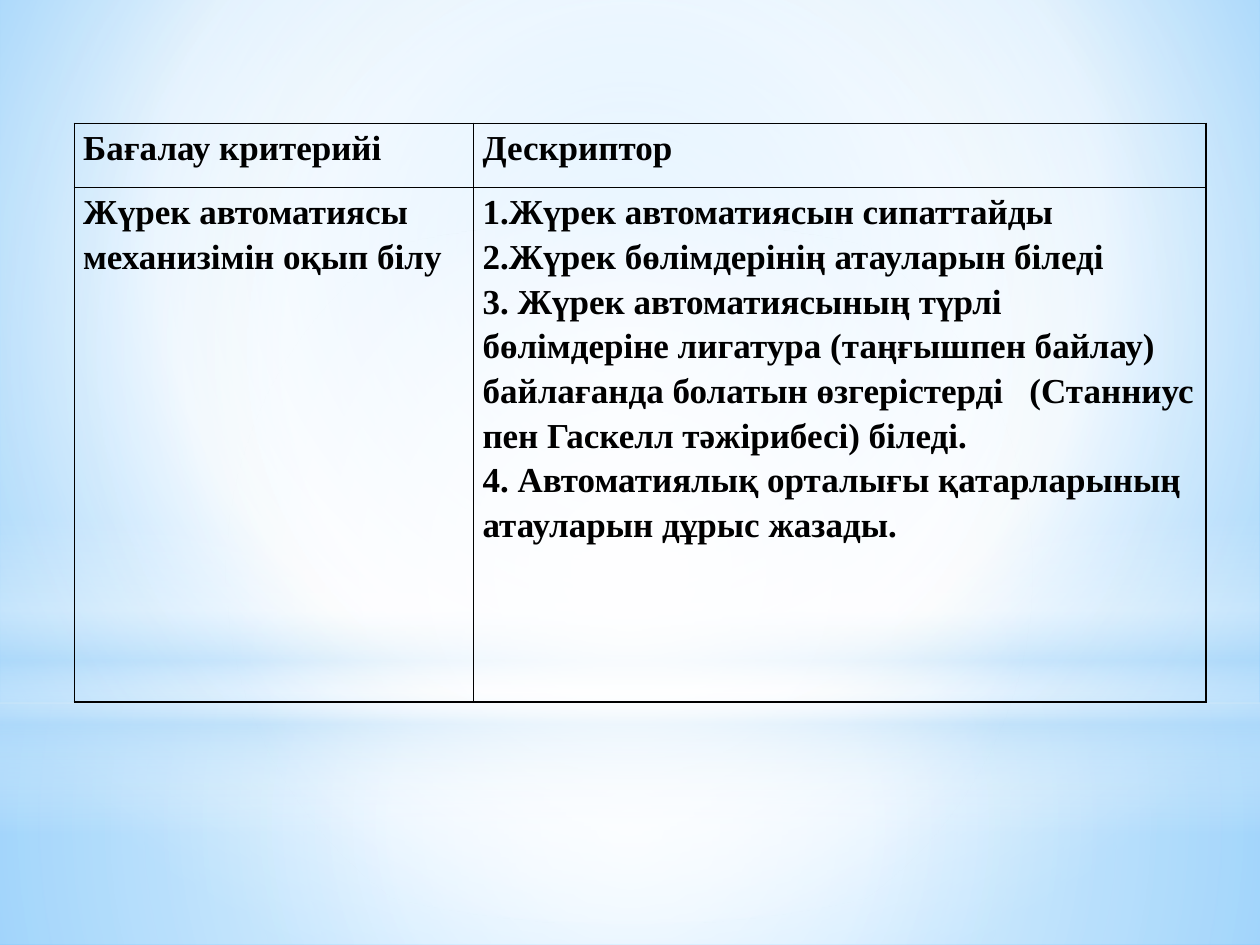
from lxml import etree
from pptx import Presentation
from pptx.dml.color import RGBColor
from pptx.enum import shapes
from pptx.oxml import ns
from pptx.util import Inches, Pt

INK = "000000"
WHITE = "FFFFFF"
SKY = "B4DCFA"
FONT = "Times New Roman"


def tint(node, color, alpha=100):
    """Add a colour with its opacity in percent to an XML node."""
    clr = etree.SubElement(node, ns.qn("a:srgbClr"), val=color)
    if alpha < 100:
        etree.SubElement(clr, ns.qn("a:alpha"), val=str(alpha * 1000))


def blend(old, stops, focus=None):
    """Put a gradient in place of an old fill: round at focus, else downward."""
    grad = etree.Element(ns.qn("a:gradFill"), rotWithShape="1")
    steps = etree.SubElement(grad, ns.qn("a:gsLst"))
    for pos, *shade in stops:
        tint(etree.SubElement(steps, ns.qn("a:gs"), pos=str(pos * 1000)), *shade)
    if focus:
        ring = etree.SubElement(grad, ns.qn("a:path"), path="circle")
        sides = {side: str(part * 1000) for side, part in zip("ltrb", focus)}
        etree.SubElement(ring, ns.qn("a:fillToRect"), **sides)
    else:
        etree.SubElement(grad, ns.qn("a:lin"), ang="5400000", scaled="0")
    old.getparent().replace(old, grad)


deck = Presentation()
deck.slide_width, deck.slide_height = Inches(10), Inches(7.5)
slide = deck.slides.add_slide(deck.slide_layouts[6])

# Background and its layers of light
slide.background.fill.solid()
base = slide.element.find(".//" + ns.qn("p:bgPr")).find(ns.qn("a:solidFill"))
blend(base, [(0, "9ED5FF"), (60, WHITE), (100, "5BB9FF")], (20, 10, 20, 60))

RECT, OVAL = shapes.MSO_SHAPE.RECTANGLE, shapes.MSO_SHAPE.OVAL
MID = (50, 50, 50, 50)
layers = [
    (RECT, 5.58, 1.92, [(0, WHITE, 91), (37, WHITE, 76), (100, SKY, 79)], MID),
    (RECT, 0, 5.58, [(0, WHITE, 89), (48, WHITE, 62), (100, SKY, 79)], MID),
    (RECT, 4.12, 2.5, [(0, WHITE, 0), (29, WHITE, 30), (45, SKY, 40),
                       (55, WHITE, 26), (65, SKY, 60), (100, WHITE, 0)], None),
    (OVAL, 1.75, 5.58, [(0, WHITE), (56, WHITE, 0)], MID),
]
for kind, top, height, stops, focus in layers:
    layer = slide.shapes.add_shape(kind, 0, Inches(top), Inches(10), Inches(height))
    layer.shadow.inherit = False
    layer.line.fill.background()
    layer.fill.background()
    blend(layer.element.spPr.find(ns.qn("a:noFill")), stops, focus)

# Criteria table
rows = [
    [["Бағалау критерийі"], ["Дескриптор"]],
    [["Жүрек автоматиясы механизімін оқып білу"],
     ["1.Жүрек автоматиясын сипаттайды",
      "2.Жүрек бөлімдерінің атауларын біледі",
      "3. Жүрек автоматиясының түрлі бөлімдеріне лигатура (таңғышпен байлау) "
      "байлағанда болатын өзгерістерді   (Станниус пен Гаскелл тәжірибесі) біледі.",
      "4. Автоматиялық орталығы қатарларының атауларын дұрыс жазады."]],
]
table = slide.shapes.add_table(2, 2, Inches(0.59), Inches(0.98),
                               Inches(8.98), Inches(4.59)).table
table.first_row = table.horz_banding = False
for col, width in zip(table.columns, (3.17, 5.81)):
    col.width = Inches(width)
for row, height in zip(table.rows, (0.51, 4.08)):
    row.height = Inches(height)

for row, texts in zip(table.rows, rows):
    for cell, lines in zip(row.cells, texts):
        cell.margin_left = cell.margin_right = Inches(0.07)
        cell.margin_top = cell.margin_bottom = 0
        props = cell._tc.get_or_add_tcPr()
        for side in ("lnL", "lnR", "lnT", "lnB"):
            edge = etree.SubElement(props, ns.qn("a:" + side), w=str(Pt(1)))
            tint(etree.SubElement(edge, ns.qn("a:solidFill")), INK)
        cell.fill.background()
        frame = cell.text_frame
        for num, line in enumerate(lines):
            para = frame.add_paragraph() if num else frame.paragraphs[0]
            para.line_spacing = 1.15
            run = para.add_run()
            run.text = line
            font = run.font
            font.name, font.size, font.bold = FONT, Pt(20), True
            font.color.rgb = RGBColor.from_string(INK)

deck.save("out.pptx")
